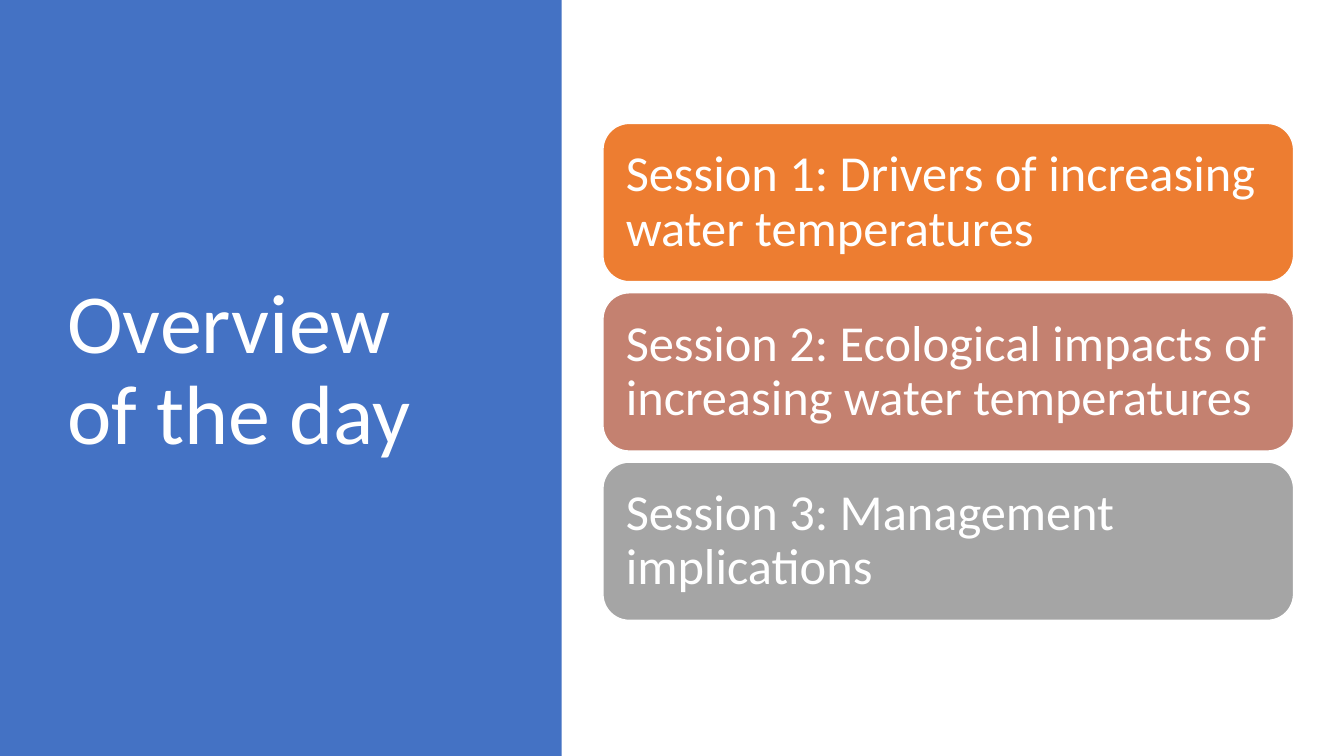
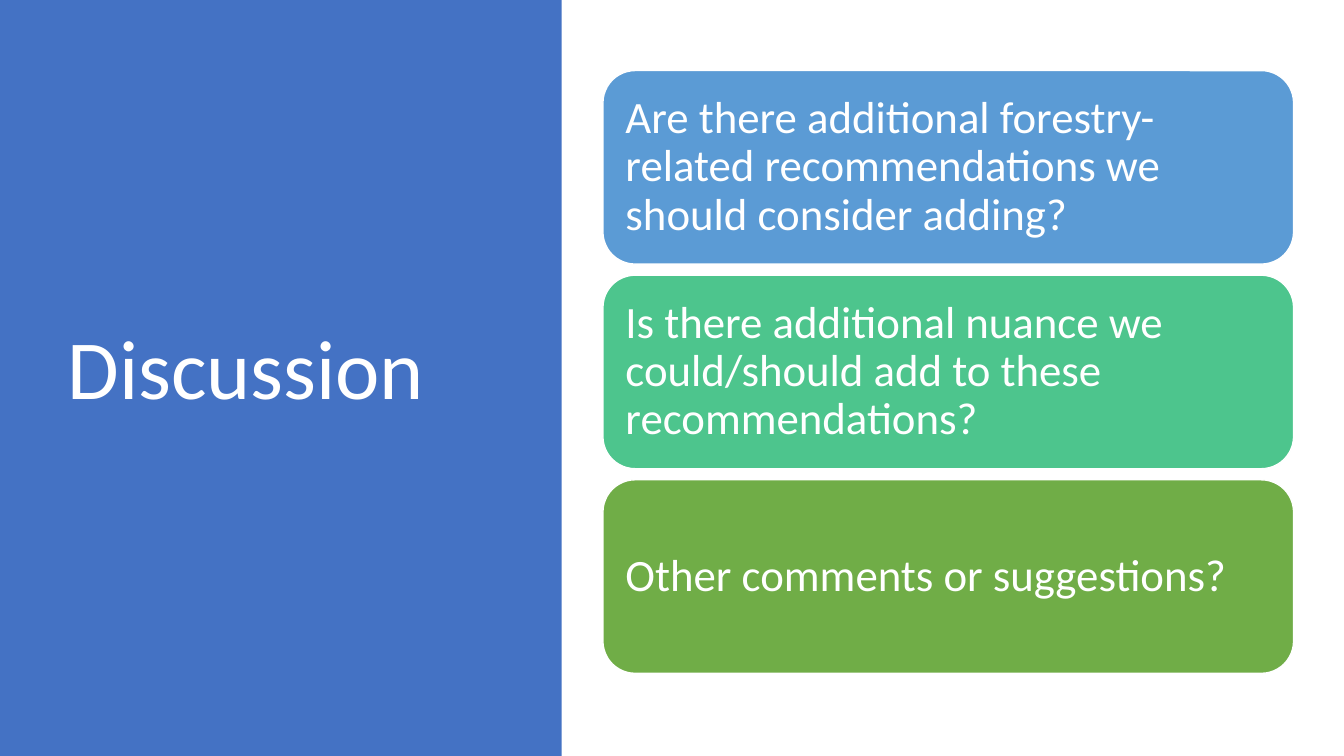
from pptx import Presentation
from pptx.dml.color import RGBColor
from pptx.enum.shapes import MSO_SHAPE
from pptx.enum.text import MSO_ANCHOR, PP_ALIGN
from pptx.util import Inches, Pt

FONT = "Calibri"
WHITE = "FFFFFF"
PANEL_BLUE = "4472C4"
CARD_LEFT, CARD_WIDTH, CARD_GAP = 5.98, 6.85, 0.11
STACK_MIDDLE = 3.69

# title, card height, text size, card margin, cards as (colour, text)
SLIDES = [
    ("Overview of the day", 1.57, 36, 0.15, [
        ("ED7D31", "Session 1: Drivers of increasing water temperatures"),
        ("C48170", "Session 2: Ecological impacts of increasing water temperatures"),
        ("A5A5A5", "Session 3: Management implications"),
    ]),
    ("Discussion", 1.92, 32, 0.13, [
        ("5B9BD5", "Are there additional forestry-related recommendations we should consider adding?"),
        ("4DC58D", "Is there additional nuance we could/should add to these recommendations?"),
        ("70AD47", "Other comments or suggestions?"),
    ]),
]


def rgb(value):
    return RGBColor.from_string(value)


def write(sp, text, size):
    """Set white, left-aligned, vertically centred text."""
    tf = sp.text_frame
    tf.text = text
    tf.word_wrap = True
    tf.vertical_anchor = MSO_ANCHOR.MIDDLE
    p = tf.paragraphs[0]
    p.alignment = PP_ALIGN.LEFT
    p.line_spacing = 0.9
    r = p.runs[0]
    r.font.name = FONT
    r.font.size = Pt(size)
    r.font.color.rgb = rgb(WHITE)
    return tf


prs = Presentation()
prs.slide_width, prs.slide_height = Inches(13.33), Inches(7.5)

for title, height, size, margin, cards in SLIDES:
    s = prs.slides.add_slide(prs.slide_layouts[6])

    panel = s.shapes.add_shape(MSO_SHAPE.RECTANGLE, 0, 0, Inches(5.57), prs.slide_height)
    panel.shadow.inherit = False
    panel.fill.solid()
    panel.fill.fore_color.rgb = rgb(PANEL_BLUE)
    panel.line.fill.background()

    title_box = s.shapes.add_textbox(Inches(0.57), Inches(0.68), Inches(4.16), Inches(6.02))
    write(title_box, title, 60)

    pitch = height + CARD_GAP
    top = STACK_MIDDLE - (len(cards) * pitch - CARD_GAP) / 2
    for i, (colour, text) in enumerate(cards):
        card = s.shapes.add_shape(MSO_SHAPE.ROUNDED_RECTANGLE, Inches(CARD_LEFT),
                                  Inches(top + i * pitch), Inches(CARD_WIDTH), Inches(height))
        card.shadow.inherit = False
        card.fill.solid()
        card.fill.fore_color.rgb = rgb(colour)
        card.line.color.rgb = rgb(WHITE)
        card.line.width = Pt(1)
        tf = write(card, text, size)
        tf.margin_left = tf.margin_right = Inches(margin)
        tf.margin_top = tf.margin_bottom = Inches(margin)

prs.save("out.pptx")
